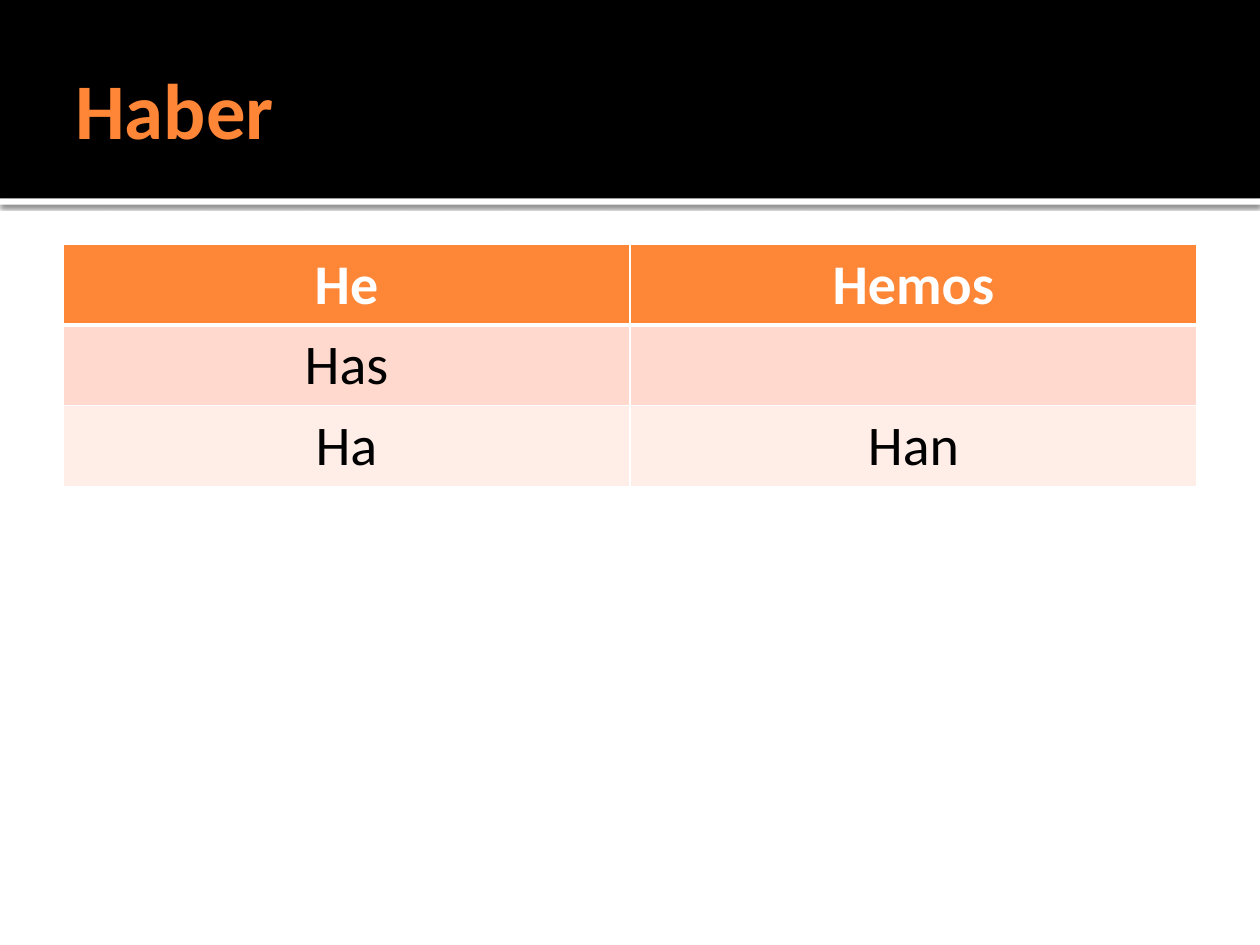
from lxml import etree
from pptx import Presentation
from pptx import util as u
from pptx.dml.color import RGBColor
from pptx.enum import shapes, text
from pptx.oxml import ns


def color(value):
    return RGBColor.from_string(value)


def add_element(parent, tag, **attributes):
    return etree.SubElement(parent, ns.qn(tag), attributes)


class SlideBuilder:
    font = "Calibri"
    black = "000000"
    white = "FFFFFF"
    title_color = "FF8636"
    header_fill = "FE8637"
    band_fills = ("FFD9CE", "FFEDE8")

    def __init__(self, presentation):
        self.width = presentation.slide_width
        self.height = presentation.slide_height
        self.slide = presentation.slides.add_slide(presentation.slide_layouts[6])

    def place(self, left, top, width, height):
        return (
            round(left * self.width),
            round(top * self.height),
            round(width * self.width),
            round(height * self.height),
        )

    def style(self, paragraph, size, value, bold):
        font = paragraph.font
        font.name = self.font
        font.size = u.Pt(size)
        font.bold = bold
        font.color.rgb = color(value)

    def band(self, top, height, fill):
        shape = self.slide.shapes.add_shape(
            shapes.MSO_SHAPE.RECTANGLE, *self.place(0, top, 1, height)
        )
        shape.shadow.inherit = False
        shape.fill.solid()
        shape.fill.fore_color.rgb = color(fill)
        shape.line.fill.background()
        return shape

    def shadow(self, shape, opacity, blur, distance, angle):
        effects = shape.element.spPr.find(ns.qn("a:effectLst"))
        outer = add_element(
            effects, "a:outerShdw", blurRad=str(u.Pt(blur)), dist=str(u.Pt(distance)),
            dir=str(angle * 60000), algn="t", rotWithShape="0",
        )
        tint = add_element(outer, "a:srgbClr", val=self.black)
        add_element(tint, "a:alpha", val=str(opacity * 1000))

    def title(self, words, box):
        frame = self.slide.shapes.add_textbox(*self.place(*box)).text_frame
        frame.word_wrap = True
        frame.vertical_anchor = text.MSO_ANCHOR.MIDDLE
        frame.margin_left = u.Inches(0.1)
        frame.margin_right = frame.margin_top = frame.margin_bottom = u.Inches(0.05)
        paragraph = frame.paragraphs[0]
        paragraph.text = words
        self.style(paragraph, 45, self.title_color, True)

    def borders(self, cell, widths):
        properties = cell._tc.get_or_add_tcPr()
        for side, width in zip("LRTB", widths):
            line = add_element(properties, f"a:ln{side}", w=str(u.Pt(width)))
            add_element(add_element(line, "a:solidFill"), "a:srgbClr", val=self.white)

    def cell(self, cell, words, row):
        header = row == 0
        self.borders(cell, (1, 1, 3 if row == 1 else 1, 3 if header else 1))
        cell.fill.solid()
        fill = self.header_fill if header else self.band_fills[(row - 1) % 2]
        cell.fill.fore_color.rgb = color(fill)
        paragraph = cell.text_frame.paragraphs[0]
        paragraph.text = words
        paragraph.alignment = text.PP_ALIGN.CENTER
        self.style(paragraph, 32, self.white if header else self.black, header)

    def table(self, rows, left, top, width, row_height):
        box = self.place(left, top, width, row_height * len(rows))
        table = self.slide.shapes.add_table(len(rows), len(rows[0]), *box).table
        for row, entries in enumerate(rows):
            table.rows[row].height = round(row_height * self.height)
            for column, words in enumerate(entries):
                self.cell(table.cell(row, column), words, row)


def main():
    presentation = Presentation()
    presentation.slide_width = u.Inches(10)
    presentation.slide_height = u.Inches(7.5)
    builder = SlideBuilder(presentation)
    header_height = 0.21
    rule = builder.band(header_height, 0.05 / 7.5, builder.white)
    builder.shadow(rule, opacity=60, blur=2.5, distance=0.8, angle=90)
    builder.band(0, header_height, builder.black)
    builder.title("Haber", (0.05, 0.17 / 7.5, 0.9, 1.37 / 7.5))
    conjugation = [("He", "Hemos"), ("Has", ""), ("Ha", "Han")]
    builder.table(conjugation, 0.05, 1.94 / 7.5, 0.9, 0.64 / 7.5)
    presentation.save("out.pptx")


if __name__ == "__main__":
    main()
